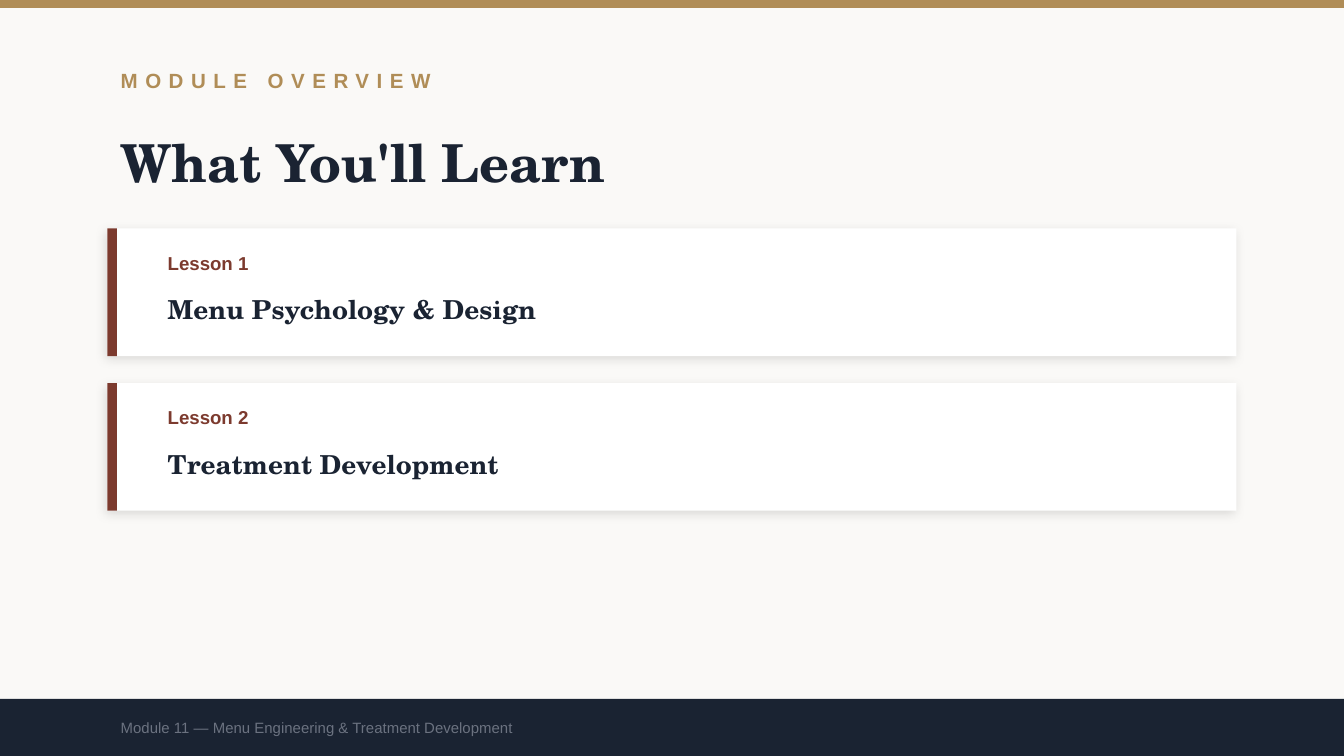
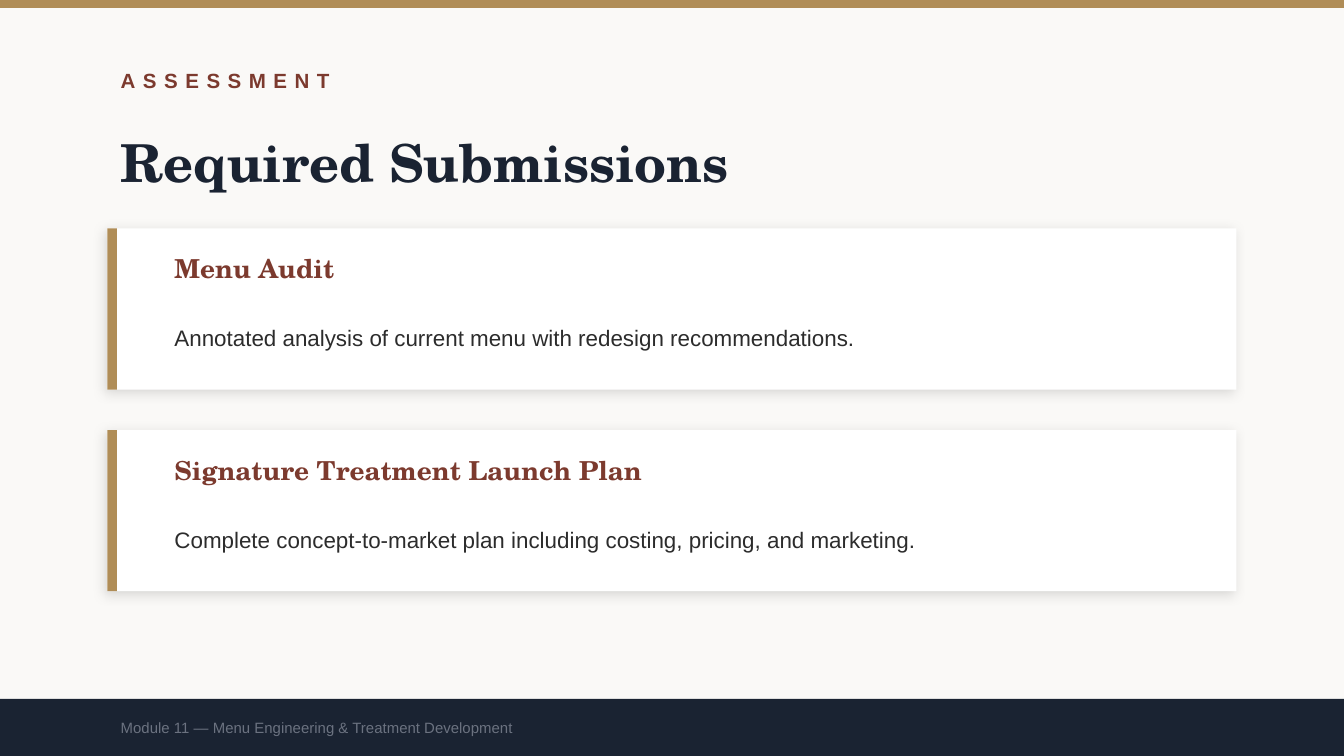
from lxml import etree
from pptx import Presentation
from pptx.dml.color import RGBColor
from pptx.enum.shapes import MSO_SHAPE
from pptx.enum.text import MSO_ANCHOR
from pptx.oxml.ns import qn
from pptx.util import Pt

RECT = MSO_SHAPE.RECTANGLE
MIDDLE = MSO_ANCHOR.MIDDLE

COLORS = {
    "paper": "FAF9F7",
    "white": "FFFFFF",
    "gold": "B08D57",
    "rust": "7C3A2E",
    "navy": "1A2332",
    "body": "2C2C2C",
    "muted": "6B7280",
    "shadow": "000000",
}
SANS = "Arial"
SERIF = "TeX Gyre Schola"

SLIDE_W, SLIDE_H = 720, 405
MARGIN = 57.6
TEXT_W = 576
CARD_W = 604.8
CARDS_TOP = 122.4
FOOTER_TOP = 374.4
FOOTER = "Module 11 — Menu Engineering & Treatment Development"

LESSONS = [
    ("Lesson 1", "Menu Psychology & Design"),
    ("Lesson 2", "Treatment Development"),
]
SUBMISSIONS = [
    ("Menu Audit",
     "Annotated analysis of current menu with redesign recommendations."),
    ("Signature Treatment Launch Plan",
     "Complete concept-to-market plan including costing, pricing, and marketing."),
]


def rgb(name):
    return RGBColor.from_string(COLORS[name])


def add_rect(slide, x, y, w, h, color):
    sp = slide.shapes.add_shape(RECT, Pt(x), Pt(y), Pt(w), Pt(h))
    sp.fill.solid()
    sp.fill.fore_color.rgb = rgb(color)
    sp.line.fill.background()
    sp.shadow.inherit = False
    return sp


def add_soft_shadow(sp):
    effects = sp._element.spPr.find(qn("a:effectLst"))
    shadow = etree.SubElement(
        effects, qn("a:outerShdw"), blurRad=str(Pt(6)), dist=str(Pt(2)),
        dir=str(135 * 60000), algn="bl", rotWithShape="0")
    color = etree.SubElement(shadow, qn("a:srgbClr"), val=COLORS["shadow"])
    etree.SubElement(color, qn("a:alpha"), val="12000")


def add_text(slide, x, y, w, h, text, size, color, font=SANS, bold=False,
             tracking=0, line_spacing=None):
    """Add one line of vertically centred text; tracking is in points."""
    tf = slide.shapes.add_textbox(Pt(x), Pt(y), Pt(w), Pt(h)).text_frame
    tf.word_wrap = True
    tf.vertical_anchor = MIDDLE
    p = tf.paragraphs[0]
    p.text = text
    if line_spacing:
        p.line_spacing = line_spacing
    r = p.runs[0]
    r.font.name = font
    r.font.size = Pt(size)
    r.font.bold = bold
    r.font.color.rgb = rgb(color)
    if tracking:
        r._r.get_or_add_rPr().set("spc", str(tracking * 100))


def add_header(slide, label, label_color, title):
    add_rect(slide, 0, 0, SLIDE_W, 4.32, "gold")
    add_text(slide, MARGIN, 28.8, TEXT_W, 28.8, label, 11, label_color,
             bold=True, tracking=4)
    add_text(slide, MARGIN, 64.8, TEXT_W, 43.2, title, 28, "navy", SERIF, True)


def add_footer(slide):
    h = SLIDE_H - FOOTER_TOP
    add_rect(slide, 0, FOOTER_TOP, SLIDE_W, h, "navy")
    add_text(slide, MARGIN, FOOTER_TOP, TEXT_W, h, FOOTER, 8, "muted")


def add_card(slide, x, y, w, h, accent):
    add_soft_shadow(add_rect(slide, x, y, w, h, "white"))
    add_rect(slide, x, y, 5.04, h, accent)


def lesson_card(slide, x, y, w, h, label, name):
    add_card(slide, x, y, w, h, "rust")
    add_text(slide, x + 25.2, y + 5.76, w - 100.8, 25.2, label, 10, "rust",
             bold=True)
    add_text(slide, x + 25.2, y + 28.8, w - 43.2, 28.8, name, 14, "navy",
             SERIF, True)


def submission_card(slide, x, y, w, h, name, detail):
    add_card(slide, x, y, w, h, "gold")
    add_text(slide, x + 28.8, y + 8.64, w - 50.4, 25.2, name, 14, "rust",
             SERIF, True)
    add_text(slide, x + 28.8, y + 36, w - 50.4, 39.6, detail, 12, "body",
             line_spacing=1.4)


def card_slide(prs, label, label_color, title, draw_card, items, card_h, gap):
    """Add a slide with a header, a stack of cards and the footer."""
    slide = prs.slides.add_slide(prs.slide_layouts[6])
    slide.background.fill.solid()
    slide.background.fill.fore_color.rgb = rgb("paper")
    add_header(slide, label, label_color, title)
    for i, item in enumerate(items):
        y = CARDS_TOP + i * (card_h + gap)
        draw_card(slide, MARGIN, y, CARD_W, card_h, *item)
    add_footer(slide)


def main():
    prs = Presentation()
    prs.slide_width, prs.slide_height = Pt(SLIDE_W), Pt(SLIDE_H)
    card_slide(prs, "MODULE OVERVIEW", "gold", "What You'll Learn",
               lesson_card, LESSONS, card_h=68.4, gap=14.4)
    card_slide(prs, "ASSESSMENT", "rust", "Required Submissions",
               submission_card, SUBMISSIONS, card_h=86.4, gap=21.6)
    prs.save("out.pptx")


if __name__ == "__main__":
    main()
